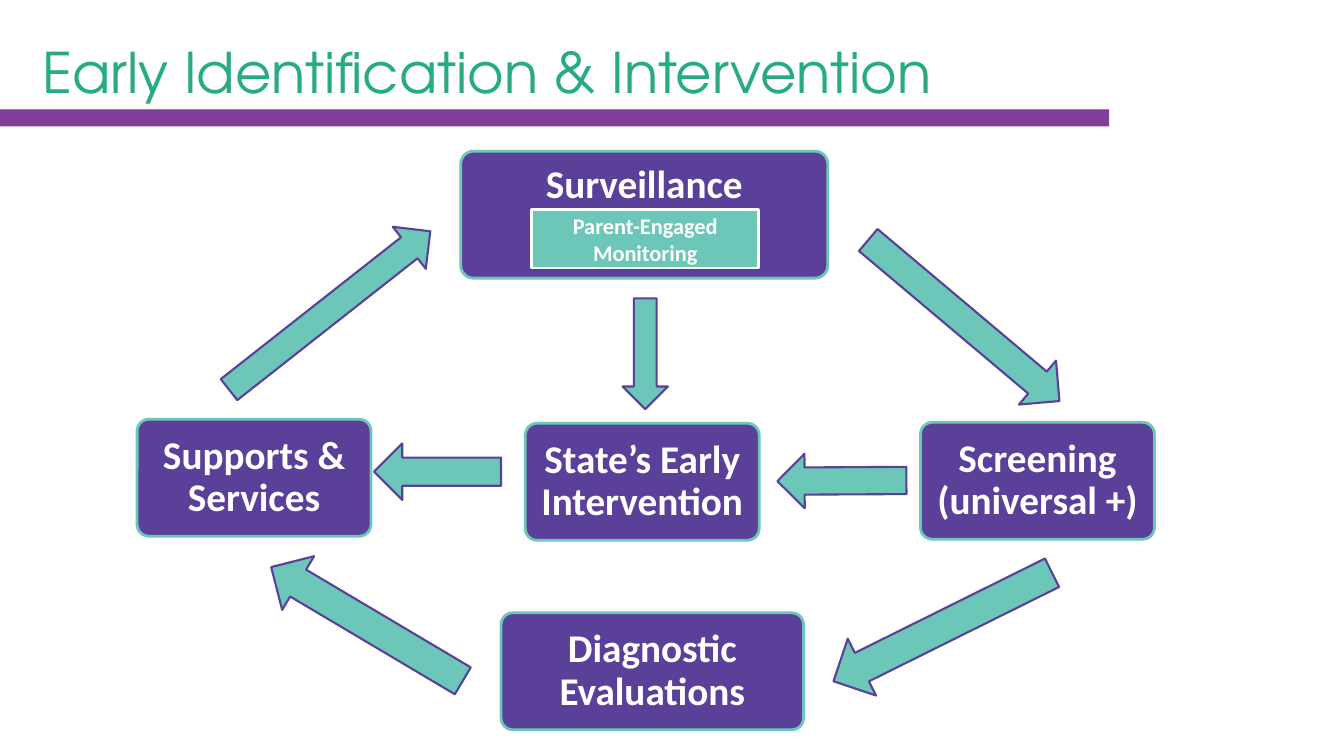
"""Build the Early Identification & Intervention cycle slide."""
import pptx
import pptx.util
import pptx.dml.color
import pptx.enum.shapes
import pptx.enum.text

SHAPES = pptx.enum.shapes.MSO_SHAPE
ANCHOR = pptx.enum.text.MSO_ANCHOR
ALIGN = pptx.enum.text.PP_ALIGN

COLORS = {"purple": "5A4099", "teal": "6CC7B8", "bar": "823D97",
          "title": "26AB84", "white": "FFFFFF"}
SLIDE_SIZE = (13.33, 7.5)
CELL = 1.0

TITLE = "Early Identification & Intervention"
TITLE_AREA = (0.32, 0.33, 10.45, 0.75)
BAR_CENTER, BAR_SIZE = (5.5, 1.17), (11, 0.17)

STEP_SIZE = (2.32, 1.16)
STEP_INSET = 0.1
STEPS = [
    ("Surveillance", (6.39, 2.13), (3.64, 1.26), ANCHOR.TOP),
    ("Screening (universal +)", (10.29, 4.77), STEP_SIZE, ANCHOR.MIDDLE),
    ("Diagnostic Evaluations", (6.47, 6.66), (3, 1.16), ANCHOR.MIDDLE),
    ("Supports & Services", (2.52, 4.74), STEP_SIZE, ANCHOR.MIDDLE),
    ("State’s Early Intervention", (6.37, 4.78), STEP_SIZE, ANCHOR.MIDDLE),
]
MONITORING = ["Parent-Engaged", "Monitoring"]
MONITORING_CENTER, MONITORING_SIZE = (6.4, 2.37), (2.25, 0.58)

ARROWS = [
    (SHAPES.RIGHT_ARROW, (9.56, 3.18), (2.48, 0.57), 40.1),
    (SHAPES.RIGHT_ARROW, (9.35, 6.22), (2.42, 0.63), 153.6),
    (SHAPES.RIGHT_ARROW, (3.64, 6.19), (2.21, 0.62), 210.7),
    (SHAPES.RIGHT_ARROW, (3.27, 3.08), (2.54, 0.53), 321.8),
    (SHAPES.LEFT_ARROW, (4.34, 4.68), (1.26, 0.56), 0),
    (SHAPES.LEFT_ARROW, (8.35, 4.77), (1.28, 0.54), 359.7),
    (SHAPES.DOWN_ARROW, (6.4, 3.51), (0.45, 1.1), 0),
]


def grid(cells):
    return pptx.util.Inches(cells * CELL)


def rgb(name):
    return pptx.dml.color.RGBColor.from_string(COLORS[name])


def apply(target, values):
    for name, value in values.items():
        setattr(target, name, value)


def add_centered(slide, kind, center, size, fill, line=None, line_width=0):
    left, top = (middle - length / 2 for middle, length in zip(center, size))
    shape = slide.shapes.add_shape(kind, *map(grid, (left, top, *size)))
    shape.shadow.inherit = False
    shape.fill.solid()
    shape.fill.fore_color.rgb = rgb(fill)
    if line:
        shape.line.color.rgb = rgb(line)
        shape.line.width = pptx.util.Pt(line_width)
    else:
        shape.line.fill.background()
    return shape


def write(shape, lines, font, size, color, inset, anchor, align, spacing=1.0, bold=True):
    frame = shape.text_frame
    apply(frame, {"word_wrap": True, "vertical_anchor": anchor,
                  "auto_size": pptx.enum.text.MSO_AUTO_SIZE.NONE})
    apply(frame, {f"margin_{side}": grid(inset)
                  for side in ("left", "top", "right", "bottom")})
    frame.text = "\n".join(lines)
    for paragraph in frame.paragraphs:
        apply(paragraph, {"alignment": align, "line_spacing": spacing})
        apply(paragraph.font, {"name": font, "size": pptx.util.Pt(size), "bold": bold})
        paragraph.font.color.rgb = rgb(color)


def main():
    presentation = pptx.Presentation()
    apply(presentation, dict(zip(("slide_width", "slide_height"), map(grid, SLIDE_SIZE))))
    slide = presentation.slides.add_slide(presentation.slide_layouts[5])

    title = slide.shapes.title
    apply(title, dict(zip(("left", "top", "width", "height"), map(grid, TITLE_AREA))))
    write(title, [TITLE], "TeX Gyre Adventor", 40, "title", 0.1,
          ANCHOR.MIDDLE, ALIGN.LEFT, bold=False)
    add_centered(slide, SHAPES.RECTANGLE, BAR_CENTER, BAR_SIZE, "bar")

    for label, center, size, anchor in STEPS:
        step = add_centered(slide, SHAPES.ROUNDED_RECTANGLE, center, size,
                            "purple", "teal", 2)
        step.adjustments[0] = 0.1
        write(step, [label], "Calibri", 28, "white", STEP_INSET, anchor,
              ALIGN.CENTER, 0.9)

    for kind, center, size, rotation in ARROWS:
        arrow = add_centered(slide, kind, center, size, "teal", "purple", 1.5)
        arrow.rotation = rotation

    monitoring = add_centered(slide, SHAPES.RECTANGLE, MONITORING_CENTER,
                              MONITORING_SIZE, "teal", "white", 2)
    write(monitoring, MONITORING, "Calibri", 16, "white", 0.08,
          ANCHOR.MIDDLE, ALIGN.CENTER)

    presentation.save("out.pptx")


if __name__ == "__main__":
    main()
